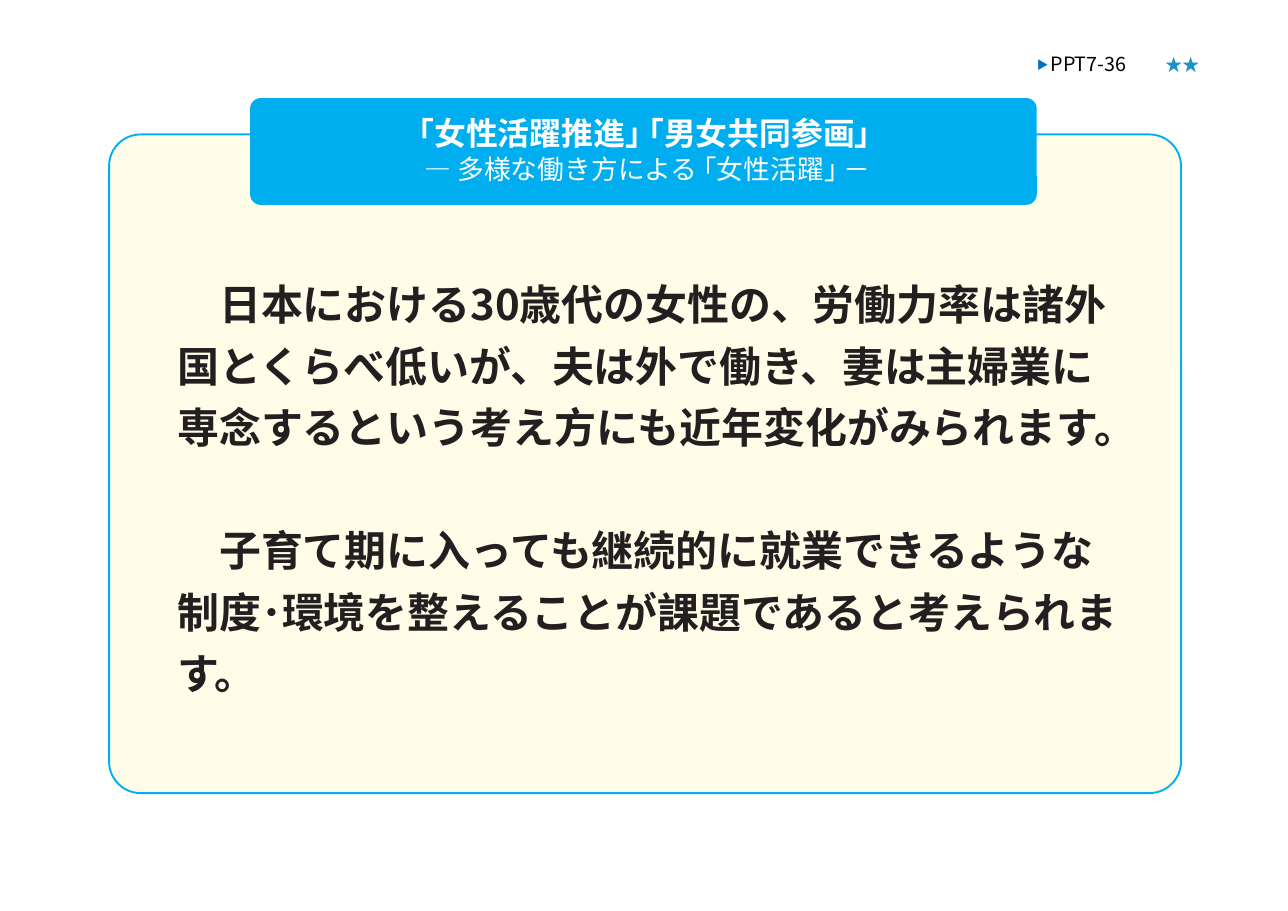
from pptx import Presentation
from pptx.dml.color import RGBColor
from pptx.enum.shapes import MSO_SHAPE
from pptx.enum.text import PP_ALIGN
from pptx.oxml.ns import qn
from pptx.util import Inches, Pt
from lxml import etree

ROUNDED = MSO_SHAPE.ROUNDED_RECTANGLE
LEFT = PP_ALIGN.LEFT
CENTER = PP_ALIGN.CENTER
FONT = "Noto Sans CJK JP"


def color(value):
    return RGBColor.from_string(value)


def add_run(paragraph, text, size, text_color, bold=False):
    run = paragraph.add_run()
    run.text = text
    run.font.color.rgb = color(text_color)
    font_format = {"name": FONT, "size": Pt(size), "bold": bold}
    for name, value in font_format.items():
        setattr(run.font, name, value)
    properties = run.font._element
    etree.SubElement(properties, qn("a:ea")).set("typeface", FONT)
    return properties


presentation = Presentation()
presentation.slide_width = Inches(11.69)
presentation.slide_height = Inches(8.27)
slide = presentation.slides.add_slide(presentation.slide_layouts[6])

panels = [
    ((0.99, 1.22, 9.73, 5.98), 0.048, "FFFDE8", "00B0F0"),
    ((2.27, 0.89, 7.14, 0.97), 0.1, "00AEEF", None),
]
for box, corner, fill_color, line_color in panels:
    shape = slide.shapes.add_shape(ROUNDED, *map(Inches, box))
    shape.adjustments[0] = corner
    shape.shadow.inherit = False
    shape.fill.solid()
    shape.fill.fore_color.rgb = color(fill_color)
    if line_color:
        shape.line.color.rgb = color(line_color)
        shape.line.width = Pt(1.25)
    else:
        shape.line.fill.background()

body_line = Pt(40.2)
body_style = (27.4, "231F20", True)
text_boxes = [
    ((1.61, 2.43, 8.66, 3.91), 0, [
        ({"line_spacing": body_line, "alignment": LEFT},
         [("　日本における30歳代の女性の、労働力率は諸外国とくらべ低いが、夫は外で働き、妻は主婦業に専念するという考え方にも近年変化がみられます。", *body_style)]),
        ({"line_spacing": body_line, "space_before": body_line, "alignment": LEFT},
         [("　子育て期に入っても継続的に就業できるような制度･環境を整えることが課題であると考えられます。", *body_style)]),
    ]),
    ((2.28, 1.03, 7.14, 0.72), 0, [
        ({"space_before": Pt(3.7), "alignment": CENTER},
         [("｢女性活躍推進｣ ｢男女共同参画｣", 20.8, "FFFFFF", True)]),
    ]),
    ((2.31, 1.39, 7.14, 0.36), 0, [
        ({"alignment": CENTER},
         [("— 多様な働き方による ｢女性活躍｣ －", 17.5, "FFFFFF")]),
    ]),
    ((9.41, 0.47, 1.09, 0.23), 0, [
        ({"space_before": Pt(1.1), "alignment": LEFT},
         [("▶ ", 12.9, "0070C0"), ("PPT7-36", 12.9, "000000")]),
    ]),
    ((10.58, 0.49, 0.5, 0.23), 0, [
        ({"alignment": LEFT}, [("★★", 11.3, "1B93C9")]),
    ]),
]
frame_format = {"word_wrap": True, "margin_left": 0, "margin_top": 0,
                "margin_right": 0, "margin_bottom": 0}
for box, margin, paragraphs in text_boxes:
    frame = slide.shapes.add_textbox(*map(Inches, box)).text_frame
    for name, value in frame_format.items():
        setattr(frame, name, value)
    for index, (paragraph_format, runs) in enumerate(paragraphs):
        paragraph = frame.add_paragraph() if index else frame.paragraphs[0]
        for name, value in paragraph_format.items():
            setattr(paragraph, name, value)
        for run_values in runs:
            properties = add_run(paragraph, *run_values)
            if run_values[0].startswith("▶"):
                properties.set("baseline", "9000")

presentation.save("out.pptx")
